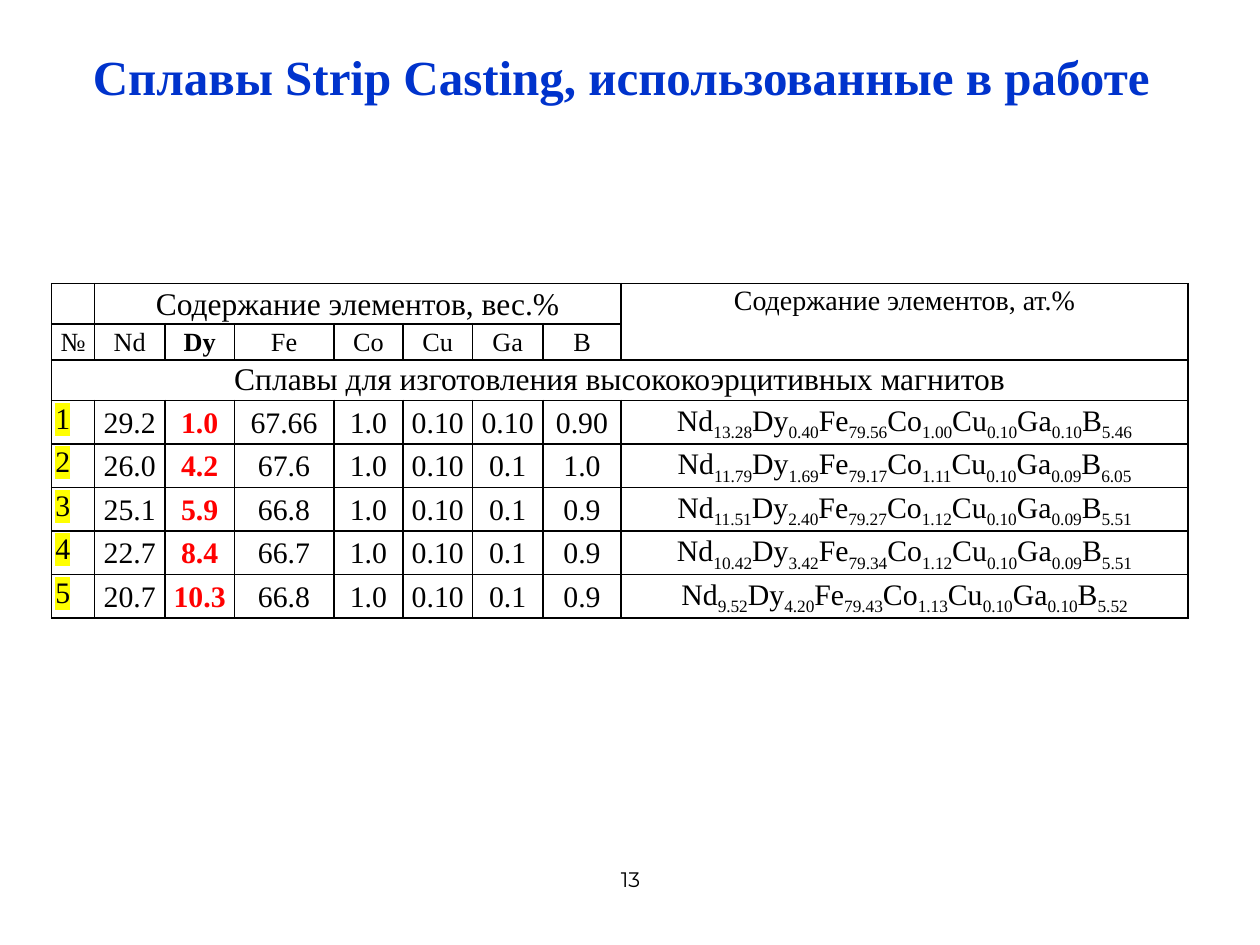
import pptx
import pptx.dml.color
import pptx.enum.text
import pptx.oxml.ns
import pptx.util
from lxml import etree

Inches = pptx.util.Inches
Pt = pptx.util.Pt
RGBColor = pptx.dml.color.RGBColor
ALIGN = pptx.enum.text.PP_ALIGN
ANCHOR = pptx.enum.text.MSO_ANCHOR
qn = pptx.oxml.ns.qn

BLUE = RGBColor(0x00, 0x33, 0xCC)
RED = RGBColor(0xFF, 0x00, 0x00)
BLACK = RGBColor(0x00, 0x00, 0x00)
YELLOW = RGBColor(0xFF, 0xFF, 0x00)
SERIF = "Times New Roman"


def style(paragraph, size, color=BLACK, bold=False, font=SERIF, align=ALIGN.CENTER):
    paragraph.alignment = align
    paragraph.font.name = font
    paragraph.font.size = Pt(size)
    paragraph.font.bold = bold
    paragraph.font.color.rgb = color


def add_border(cell, position, side, width):
    line = etree.Element(qn(f"a:ln{side}"), w=str(Pt(width)))
    fill = etree.SubElement(line, qn("a:solidFill"))
    etree.SubElement(fill, qn("a:srgbClr"), val=str(BLACK))
    cell._tc.get_or_add_tcPr().insert(position, line)


prs = pptx.Presentation()
prs.slide_width = Inches(10)
prs.slide_height = Inches(7.5)
slide = prs.slides.add_slide(prs.slide_layouts[6])

title = slide.shapes.add_textbox(Inches(0.43), Inches(0.29), Inches(9), Inches(0.63)).text_frame
title.word_wrap = True
title.vertical_anchor = ANCHOR.MIDDLE
title.text = "Сплавы Strip Casting, использованные в работе"
style(title.paragraphs[0], 28, BLUE, bold=True)

page_number = slide.shapes.add_textbox(Inches(3.42), Inches(6.83), Inches(3.17), Inches(0.52)).text_frame
page_number.word_wrap = True
page_number.text = "13"
style(page_number.paragraphs[0], 12, font="Montserrat")

elements = ["Nd", "Dy", "Fe", "Co", "Cu", "Ga", "B"]
weights = [
    ["29.2", "1.0", "67.66", "1.0", "0.10", "0.10", "0.90"],
    ["26.0", "4.2", "67.6", "1.0", "0.10", "0.1", "1.0"],
    ["25.1", "5.9", "66.8", "1.0", "0.10", "0.1", "0.9"],
    ["22.7", "8.4", "66.7", "1.0", "0.10", "0.1", "0.9"],
    ["20.7", "10.3", "66.8", "1.0", "0.10", "0.1", "0.9"],
]
atoms = [
    ["13.28", "0.40", "79.56", "1.00", "0.10", "0.10", "5.46"],
    ["11.79", "1.69", "79.17", "1.11", "0.10", "0.09", "6.05"],
    ["11.51", "2.40", "79.27", "1.12", "0.10", "0.09", "5.51"],
    ["10.42", "3.42", "79.34", "1.12", "0.10", "0.09", "5.51"],
    ["9.52", "4.20", "79.43", "1.13", "0.10", "0.10", "5.52"],
]
rows = [
    ["", "Содержание элементов, вес.%"] + [""] * 6 + ["Содержание элементов, ат.%"],
    ["№", *elements, ""],
    ["Сплавы для изготовления высококоэрцитивных магнитов"] + [""] * 8,
]
rows += [[str(number), *values, ""] for number, values in enumerate(weights, 1)]
column_widths = [0.34, 0.56, 0.55, 0.79, 0.55, 0.55, 0.56, 0.62, 4.5]
row_heights = [0.27] * 2 + [0.31] * 6
sizes = [18, 15, 18] + [17] * 5

alloys = slide.shapes.add_table(
    len(rows), len(column_widths), Inches(0.41), Inches(2.25), Inches(9.02), Inches(sum(row_heights))
).table
alloys.first_row = False
alloys.horz_banding = False
for column, width in zip(alloys.columns, column_widths):
    column.width = Inches(width)
for row, height in zip(alloys.rows, row_heights):
    row.height = Inches(height)

for r, texts in enumerate(rows):
    for c, text in enumerate(texts):
        cell = alloys.cell(r, c)
        cell.margin_left = cell.margin_right = Inches(0.03)
        cell.margin_top = cell.margin_bottom = 0
        cell.fill.background()
        borders = {
            "L": 1,
            "R": 1.5 if c == 8 and r > 1 else 1,
            "T": 1.5 if r == 1 and 0 < c < 8 else 1,
            "B": 1.5 if r == 0 and 0 < c < 8 else 1,
        }
        for position, (side, width) in enumerate(borders.items()):
            add_border(cell, position, side, width)

        numbered = r > 2 and c == 0
        top_aligned = numbered or r == 2 or (r == 0 and c == 8)
        cell.vertical_anchor = ANCHOR.TOP if top_aligned else ANCHOR.MIDDLE
        paragraph = cell.text_frame.paragraphs[0]
        paragraph.line_spacing = 1.07
        style(
            paragraph,
            16 if r == 0 and c == 8 else sizes[r] if text or r > 2 else 15,
            color=RED if r > 2 and c == 2 else BLACK,
            bold=c == 2 and r != 2,
            align=ALIGN.JUSTIFY if numbered else ALIGN.CENTER,
        )
        if r > 2 and c == 8:
            for element, amount in zip(elements, atoms[r - 3]):
                paragraph.add_run().text = element
                subscript = paragraph.add_run()
                subscript.text = amount
                subscript._r.get_or_add_rPr().set("baseline", "-25000")
        elif text:
            run = paragraph.add_run()
            run.text = text
            if numbered:
                highlight = etree.SubElement(run._r.get_or_add_rPr(), qn("a:highlight"))
                etree.SubElement(highlight, qn("a:srgbClr"), val=str(YELLOW))

alloys.cell(0, 1).merge(alloys.cell(0, 7))
alloys.cell(0, 8).merge(alloys.cell(1, 8))
alloys.cell(2, 0).merge(alloys.cell(2, 8))

prs.save("out.pptx")
